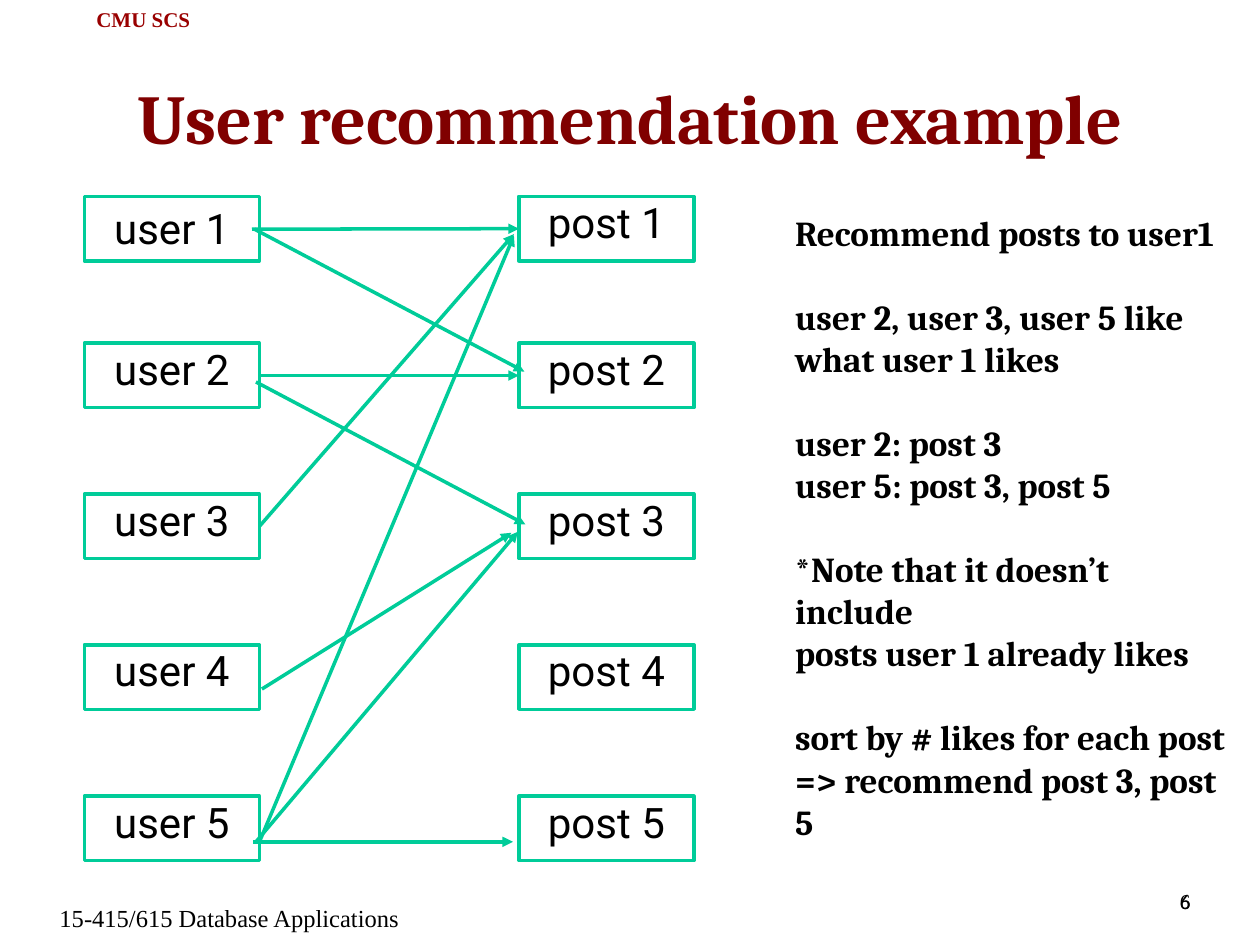
import pptx
import pptx.dml.color
import pptx.enum.shapes
import pptx.enum.text
import pptx.util
from lxml import etree
from pptx.oxml.ns import qn

Cm = pptx.util.Cm
Pt = pptx.util.Pt
RGBColor = pptx.dml.color.RGBColor
ALIGN = pptx.enum.text.PP_ALIGN
ANCHOR = pptx.enum.text.MSO_ANCHOR

BLACK = RGBColor(0, 0, 0)
WHITE = RGBColor(0xFF, 0xFF, 0xFF)
GREEN = RGBColor(0, 0xCC, 0x99)
RED = RGBColor(0x99, 0, 0)
MAROON = RGBColor(0x80, 0, 0)

LEFT_SIDE, RIGHT_SIDE = 1, 3
ROW_TOPS = [3.96, 6.92, 9.96, 13.0, 16.05]
USER_LEFT, POST_LEFT = 1.7, 10.46

# Each group of lines is set apart from the one before it.
NOTES = [
    ["Recommend posts to user1"],
    ["user 2, user 3, user 5 like", "what user 1 likes"],
    ["user 2: post 3", "user 5: post 3, post 5"],
    ["*Note that it doesn’t include", "posts user 1 already likes"],
    ["sort by # likes for each post", "=> recommend post 3, post 5"],
]

# Start point, end point, joined user, joined post
LIKES = [
    ((5.08, 4.62), (10.49, 4.62), None, 1),
    ((5.13, 4.62), (10.57, 7.49), None, None),
    ((5.23, 7.57), (10.46, 7.57), 2, 2),
    ((5.16, 7.7), (10.59, 10.57), None, None),
    ((5.28, 10.67), (10.36, 4.72), 3, None),
    ((5.28, 13.89), (10.31, 10.74), None, None),
    ((5.23, 16.97), (10.36, 4.75), None, None),
    ((5.16, 16.97), (10.44, 10.72), None, None),
    ((5.11, 16.97), (10.34, 16.97), None, None),
]


class SlideBuilder:
    def __init__(self, slide):
        self.slide = slide
        self.inset = 0.13
        self.line_width = Pt(2)

    def set_frame(self, shape, inset, anchor, wrap=True):
        frame = shape.text_frame
        frame.auto_size = pptx.enum.text.MSO_AUTO_SIZE.NONE
        frame.word_wrap = wrap
        frame.vertical_anchor = anchor
        frame.margin_left = frame.margin_right = Cm(inset)
        frame.margin_top = frame.margin_bottom = Cm(inset)
        return frame

    def set_paragraph(self, paragraph, text, font, size, color=BLACK,
                      bold=False, align=ALIGN.LEFT):
        paragraph.text = text
        paragraph.alignment = align
        paragraph.font.name = font
        paragraph.font.size = Pt(size)
        paragraph.font.bold = bold
        paragraph.font.color.rgb = color

    def title(self, text):
        title = self.slide.shapes.title
        title.left, title.top = Cm(1.27), Cm(1.55)
        title.width, title.height = Cm(22.86), Cm(1.6)
        frame = self.set_frame(title, 0, ANCHOR.MIDDLE)
        self.set_paragraph(frame.paragraphs[0], text, "Cambria", 40, MAROON,
                           True, ALIGN.CENTER)

    def label(self, box, text, font, size, anchor=ANCHOR.MIDDLE, wrap=True,
              **style):
        shape = self.slide.shapes.add_textbox(*map(Cm, box))
        frame = self.set_frame(shape, self.inset, anchor, wrap)
        self.set_paragraph(frame.paragraphs[0], text, font, size, **style)

    def notes(self, box, groups):
        shape = self.slide.shapes.add_textbox(*map(Cm, box))
        frame = self.set_frame(shape, self.inset, ANCHOR.TOP)
        paragraph = frame.paragraphs[0]
        for group_index, group in enumerate(groups):
            for line_index, text in enumerate(group):
                if group_index or line_index:
                    paragraph = frame.add_paragraph()
                self.set_paragraph(paragraph, text, "Cambria", 20, bold=True)
                if group_index and not line_index:
                    paragraph.space_before = Pt(24)

    def node(self, left, top, text, inset=0):
        shape = self.slide.shapes.add_shape(
            pptx.enum.shapes.MSO_SHAPE.RECTANGLE,
            Cm(left), Cm(top), Cm(3.53), Cm(1.3))
        shape.shadow.inherit = False
        shape.fill.solid()
        shape.fill.fore_color.rgb = WHITE
        shape.line.color.rgb = GREEN
        shape.line.width = self.line_width
        frame = self.set_frame(shape, inset, ANCHOR.TOP)
        self.set_paragraph(frame.paragraphs[0], text, "Roboto", 24,
                           align=ALIGN.CENTER)
        return shape

    def arrow(self, start, end, source=None, target=None):
        connector = self.slide.shapes.add_connector(
            pptx.enum.shapes.MSO_CONNECTOR.STRAIGHT, *map(Cm, start + end))
        connector.line.color.rgb = GREEN
        connector.line.width = self.line_width
        if source is not None:
            connector.begin_connect(source, RIGHT_SIDE)
        if target is not None:
            connector.end_connect(target, LEFT_SIDE)
        line = connector.line._get_or_add_ln()
        etree.SubElement(line, qn("a:tailEnd"), type="triangle")
        etree.SubElement(connector._element.spPr, qn("a:effectLst"))


def main():
    presentation = pptx.Presentation()
    presentation.slide_width, presentation.slide_height = Cm(25.4), Cm(19.05)
    title_only = presentation.slide_layouts[5]
    builder = SlideBuilder(presentation.slides.add_slide(title_only))

    builder.label((1.07, 18.08, 7.14, 0.81), "15-415/615 Database Applications",
                  "Times New Roman", 14, anchor=ANCHOR.TOP, wrap=False)
    builder.label((1.8, 0, 2.18, 0.76), "CMU SCS", "Times New Roman", 12,
                  wrap=False, color=RED, bold=True, align=ALIGN.CENTER)
    builder.title("User recommendation example")
    builder.notes((15.9, 4.14, 8.97, 10.77), NOTES)
    for font in ("Calibri", "Times New Roman"):
        builder.label((18.21, 17.78, 5.92, 0.76), "6", font, 12,
                      align=ALIGN.RIGHT)

    users, posts = {}, {}
    for number, top in enumerate(ROW_TOPS, start=1):
        inset = builder.inset if number == 1 else 0
        users[number] = builder.node(USER_LEFT, top, f"user {number}", inset)
        posts[number] = builder.node(POST_LEFT, top, f"post {number}")
    for start, end, user, post in LIKES:
        builder.arrow(start, end, users.get(user), posts.get(post))

    presentation.save("out.pptx")


if __name__ == "__main__":
    main()
